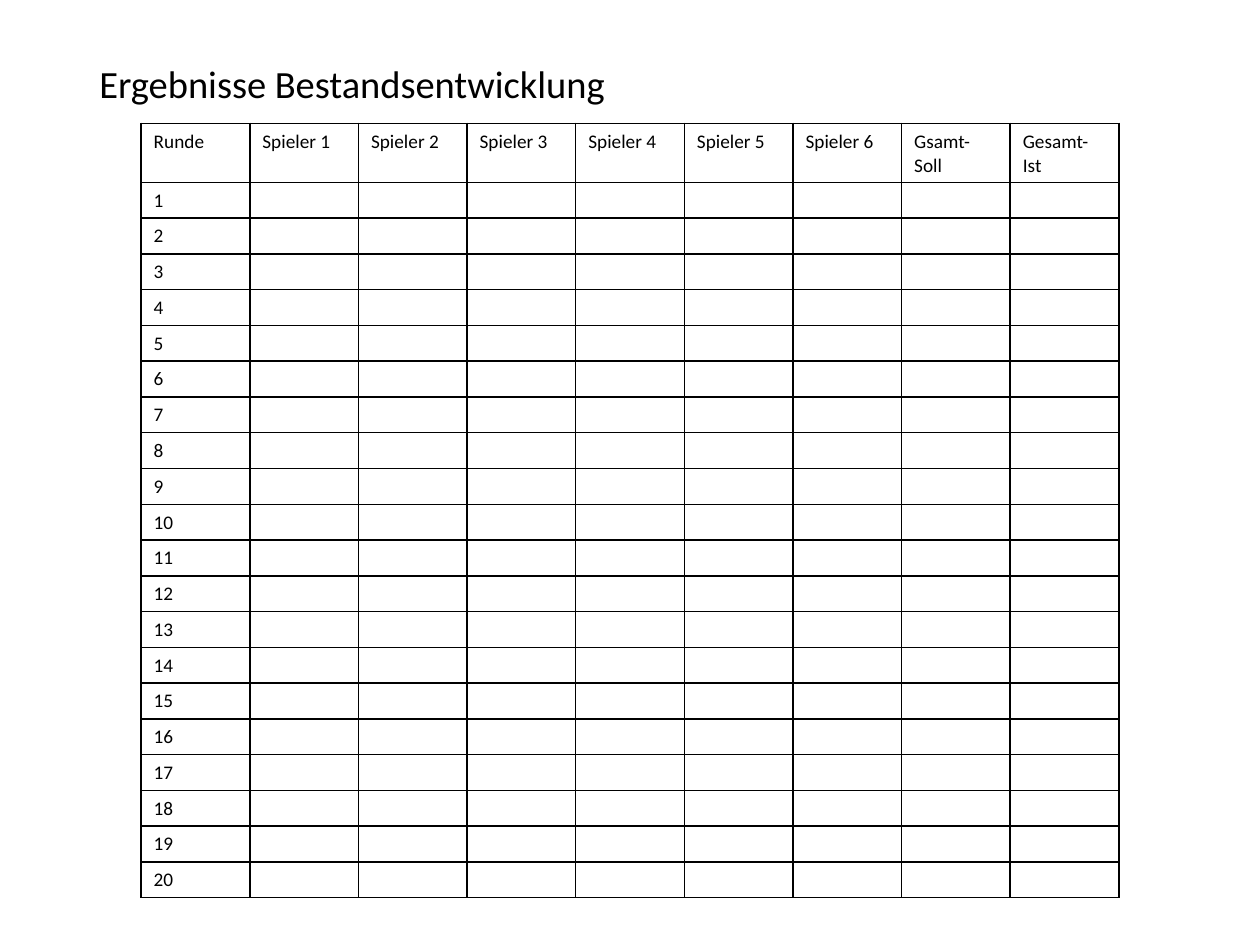
from dataclasses import dataclass
from typing import Any

from lxml.etree import SubElement
from pptx import Presentation
from pptx.dml.color import RGBColor
from pptx.enum.text import MSO_ANCHOR as Anchor
from pptx.oxml.ns import qn
from pptx.util import Inches, Pt


def color(code):
    return RGBColor.from_string(code)


@dataclass
class Sheet:
    slide: Any
    font: str = "Calibri"
    ink: str = "000000"
    title_size: int = 22
    cell_size: int = 11
    border: int = 1

    def style(self, paragraph, size):
        paragraph.font.name = self.font
        paragraph.font.size = Pt(size)
        paragraph.font.color.rgb = color(self.ink)

    def title(self, text, left, top, width, height):
        box = self.slide.shapes.add_textbox(
            Inches(left), Inches(top), Inches(width), Inches(height))
        frame = box.text_frame
        frame.word_wrap = True
        frame.vertical_anchor = Anchor.MIDDLE
        heading = frame.paragraphs[0]
        heading.text = text
        heading.line_spacing = 0.9
        self.style(heading, self.title_size)

    def borders(self, cell):
        properties = cell._tc.get_or_add_tcPr()
        for side in ("a:lnL", "a:lnR", "a:lnT", "a:lnB"):
            line = SubElement(properties, qn(side), w=str(Pt(self.border)))
            fill = SubElement(line, qn("a:solidFill"))
            SubElement(fill, qn("a:srgbClr"), val=self.ink)

    def cell(self, cell, text):
        self.borders(cell)
        cell.fill.background()
        paragraph = cell.text_frame.paragraphs[0]
        paragraph.text = text
        self.style(paragraph, self.cell_size)
        if not text:
            SubElement(paragraph._p, qn("a:endParaRPr"), sz=str(self.cell_size * 100))

    def table(self, rows, left, top, column_width, row_height):
        columns = len(rows[0])
        grid = self.slide.shapes.add_table(
            len(rows), columns, Inches(left), Inches(top),
            Inches(column_width * columns), Inches(row_height * len(rows))).table
        grid.first_row = False
        grid.horz_banding = False
        for column in grid.columns:
            column.width = Inches(column_width)
        for row, values in zip(grid.rows, rows):
            row.height = Inches(row_height)
            for cell, value in zip(row.cells, values):
                self.cell(cell, value)


def main():
    deck = Presentation()
    deck.slide_width = Inches(10)
    deck.slide_height = Inches(7.5)
    sheet = Sheet(deck.slides.add_slide(deck.slide_layouts[6]))

    players = [f"Spieler {number}" for number in range(1, 7)]
    header = ["Runde", *players, "Gsamt-Soll", "Gesamt-Ist"]
    rounds = [[str(number)] + [""] * (len(header) - 1) for number in range(1, 21)]

    sheet.title("Ergebnisse Bestandsentwicklung", 0.69, 0.53, 8.62, 0.3)
    sheet.table([header, *rounds], 1.12, 0.98, 7.76 / len(header), 0.27)
    deck.save("out.pptx")


if __name__ == "__main__":
    main()
